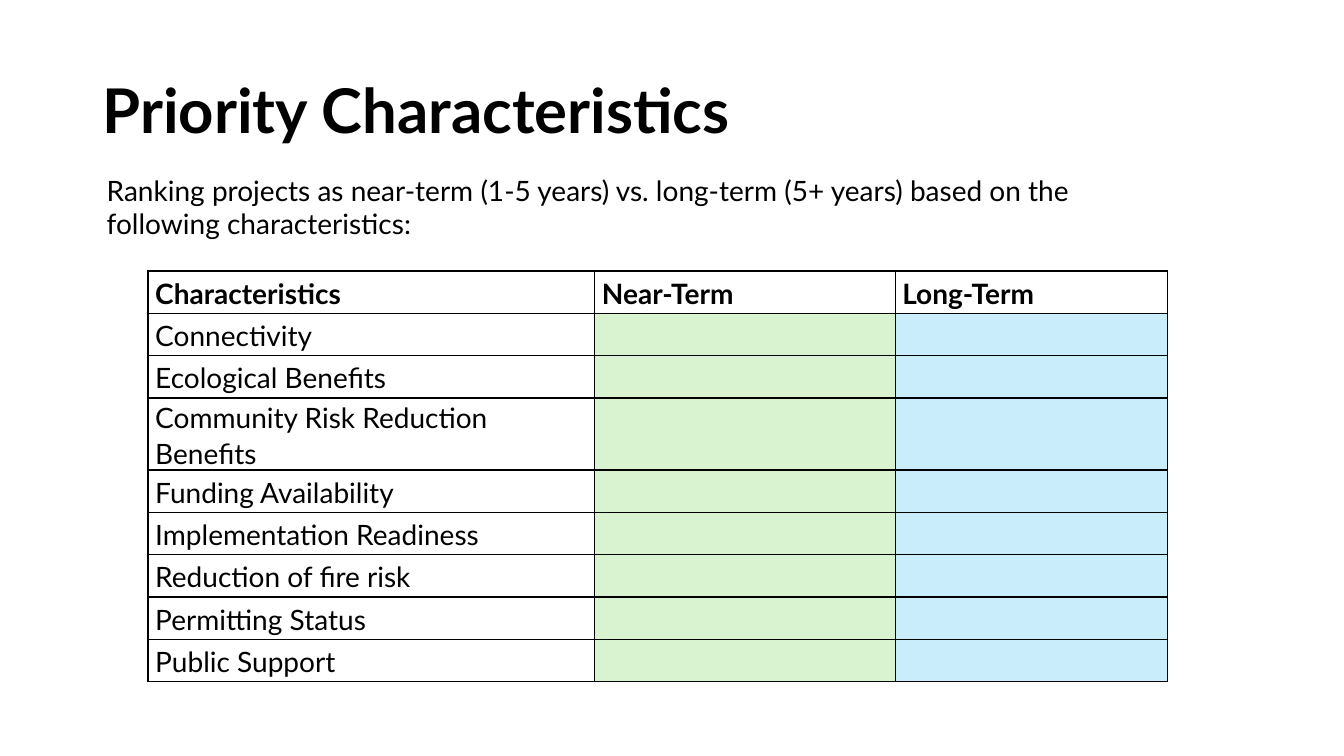
from dataclasses import dataclass
from typing import Optional

from lxml.etree import SubElement
from pptx import Presentation
from pptx.dml.color import RGBColor as RGB
from pptx.enum.text import MSO_ANCHOR as Anchor
from pptx.oxml.ns import qn
from pptx.util import Inches, Pt


@dataclass(frozen=True)
class Theme:
    font: str = "Lato"
    ink: str = "000000"
    paper: str = "FFFFFF"
    near: str = "D9F2D0"
    long: str = "CAEDFB"
    title_size: float = 44
    body_size: float = 20
    thin: float = 1
    thick: float = 1.5


@dataclass(frozen=True)
class TextBlock:
    text: str
    left: float
    top: float
    width: float
    height: float
    size: float
    bold: bool = False
    anchor: Anchor = Anchor.TOP
    line_spacing: Optional[float] = None


@dataclass(frozen=True)
class Column:
    heading: str
    width: float
    fill: Optional[str]
    heading_fill: Optional[str]


THEME = Theme()
TEXTS = [
    TextBlock("Priority Characteristics", 0.92, 0.4, 11.5, 1.45,
              THEME.title_size, True, Anchor.MIDDLE, 0.9),
    TextBlock("Ranking projects as near-term (1-5 years) vs. long-term (5+ years) "
              "based on the following characteristics:",
              0.96, 1.67, 10.48, 0.77, THEME.body_size),
]
COLUMNS = [
    Column("Characteristics", 4.43, None, None),
    Column("Near-Term", 2.98, THEME.near, THEME.paper),
    Column("Long-Term", 2.7, THEME.long, THEME.paper),
]
CHARACTERISTICS = [
    "Connectivity", "Ecological Benefits", "Community Risk Reduction Benefits",
    "Funding Availability", "Implementation Readiness", "Reduction of fire risk",
    "Permitting Status", "Public Support",
]
TABLE_LEFT, TABLE_TOP, ROW_HEIGHT = 1.47, 2.69, 0.42


def add_run(p, text: str, size: float, bold: bool = False) -> None:
    r = p.add_run()
    r.text = text
    r.font.name = THEME.font
    r.font.size = Pt(size)
    r.font.bold = bold
    r.font.color.rgb = RGB.from_string(THEME.ink)


def add_text(s, block: TextBlock) -> None:
    sp = s.shapes.add_textbox(Inches(block.left), Inches(block.top),
                              Inches(block.width), Inches(block.height))
    tf = sp.text_frame
    tf.word_wrap = True
    tf.vertical_anchor = block.anchor
    p = tf.paragraphs[0]
    if block.line_spacing:
        p.line_spacing = block.line_spacing
    add_run(p, block.text, block.size, block.bold)


def set_borders(cell, widths: dict[str, float]) -> None:
    """Borders must come before the fill in the cell properties."""
    tc_pr = cell._tc.get_or_add_tcPr()
    for side, width in widths.items():
        ln = SubElement(tc_pr, qn(f"a:ln{side}"), w=str(Pt(width)))
        fill = SubElement(ln, qn("a:solidFill"))
        SubElement(fill, qn("a:srgbClr"), val=THEME.ink)


def style_cell(cell, row: int, col: int, fill: Optional[str]) -> None:
    cell.margin_left = cell.margin_right = Inches(0.07)
    cell.margin_top = cell.margin_bottom = 0
    cell.vertical_anchor = Anchor.MIDDLE
    set_borders(cell, {
        "L": THEME.thick if col == 0 else THEME.thin,
        "R": THEME.thin,
        "T": THEME.thick if row <= 1 else THEME.thin,
        "B": THEME.thick if row == 0 else THEME.thin,
    })
    if fill:
        cell.fill.solid()
        cell.fill.fore_color.rgb = RGB.from_string(fill)
    else:
        cell.fill.background()


def add_priority_table(s) -> None:
    count = len(CHARACTERISTICS) + 1
    width = sum(column.width for column in COLUMNS)
    table = s.shapes.add_table(count, len(COLUMNS), Inches(TABLE_LEFT), Inches(TABLE_TOP),
                               Inches(width), Inches(ROW_HEIGHT * count)).table
    table.horz_banding = False
    for row in table.rows:
        row.height = Inches(ROW_HEIGHT)

    for c, column in enumerate(COLUMNS):
        table.columns[c].width = Inches(column.width)
        labels = CHARACTERISTICS if c == 0 else [""] * len(CHARACTERISTICS)
        for r, label in enumerate([column.heading, *labels]):
            cell = table.cell(r, c)
            style_cell(cell, r, c, column.fill if r else column.heading_fill)
            if label:
                p = cell.text_frame.paragraphs[0]
                p.line_spacing = 1.07
                p.space_after = Pt(8)
                add_run(p, label, THEME.body_size, bold=r == 0)


def main() -> None:
    prs = Presentation()
    prs.slide_width, prs.slide_height = Inches(13.33), Inches(7.5)
    s = prs.slides.add_slide(prs.slide_layouts[6])

    # Background
    s.background.fill.solid()
    s.background.fill.fore_color.rgb = RGB.from_string(THEME.paper)

    # Title and introduction
    for block in TEXTS:
        add_text(s, block)

    # Characteristics by term
    add_priority_table(s)

    prs.save("out.pptx")


if __name__ == "__main__":
    main()
